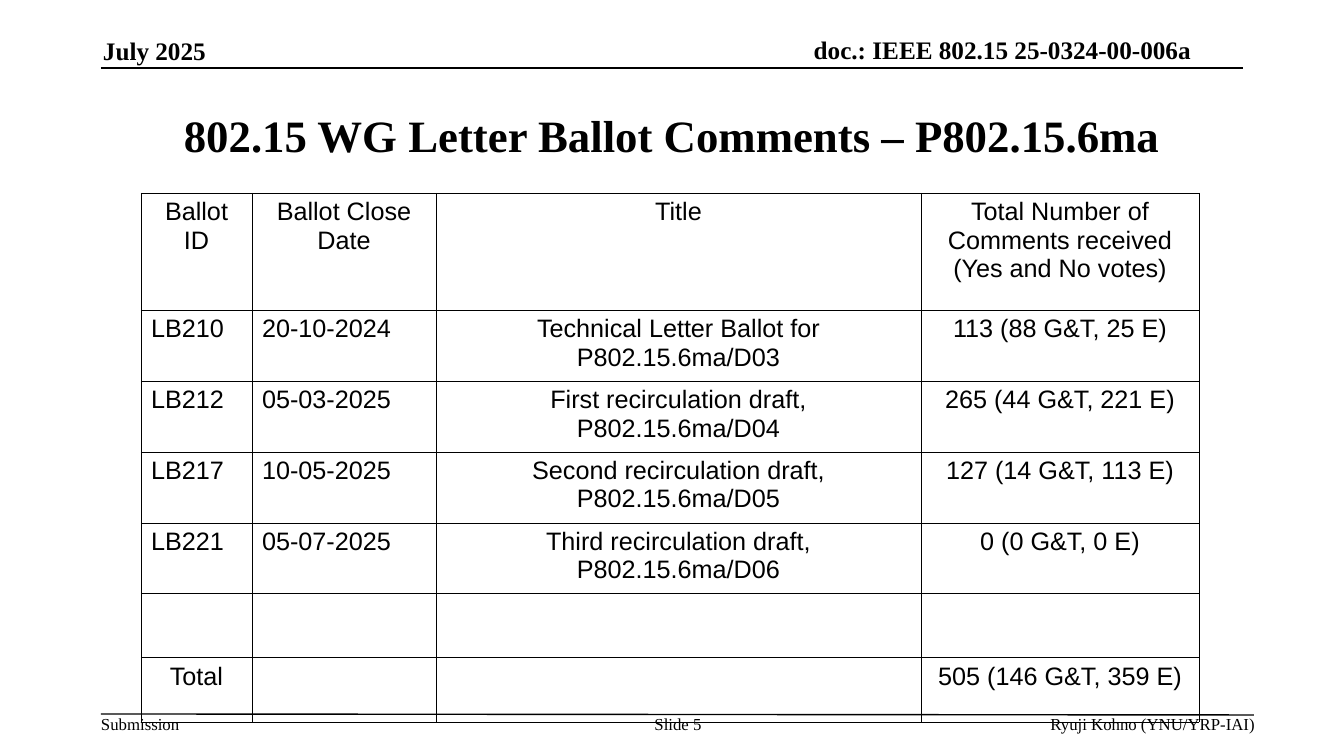
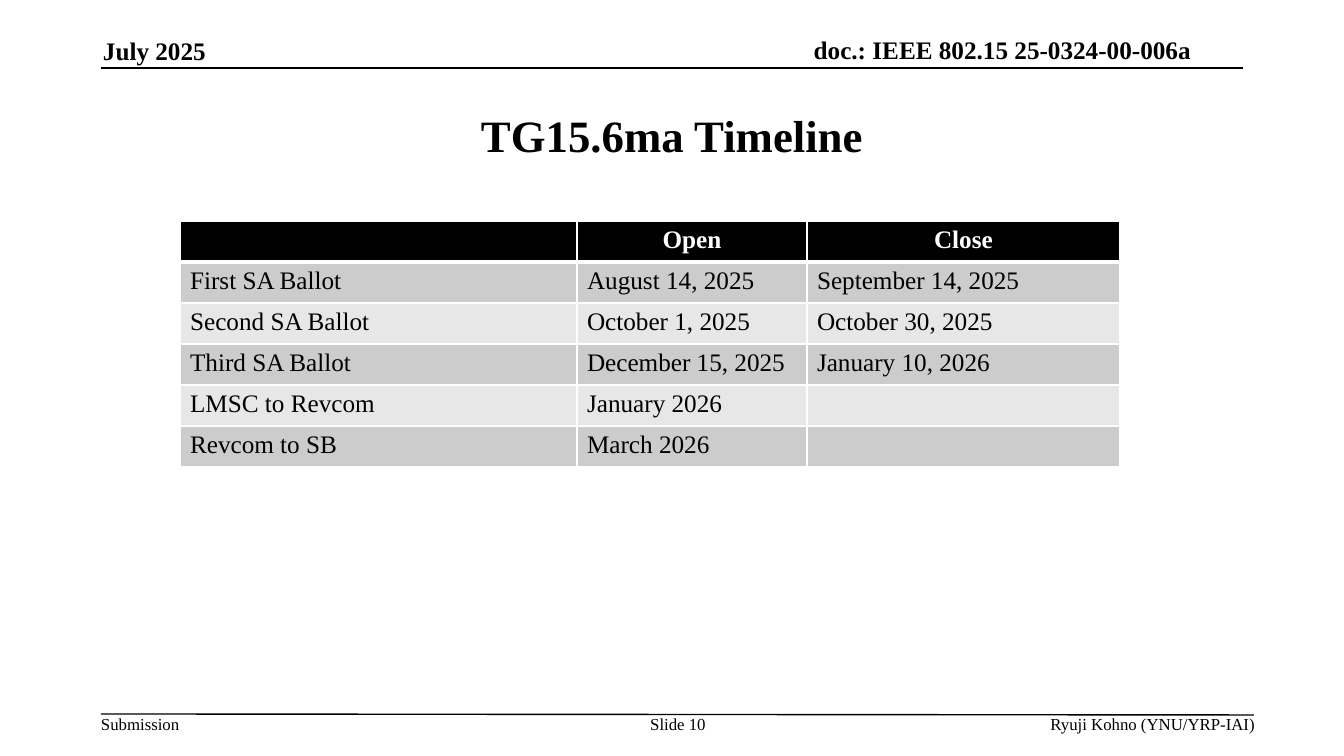
from lxml import etree
from pptx import Presentation
from pptx.dml.color import RGBColor
from pptx.enum.shapes import MSO_CONNECTOR
from pptx.enum.text import MSO_ANCHOR, PP_ALIGN
from pptx.oxml.ns import qn
from pptx.util import Emu, Pt

STRAIGHT = MSO_CONNECTOR.STRAIGHT
TOP, MIDDLE, BOTTOM = MSO_ANCHOR.TOP, MSO_ANCHOR.MIDDLE, MSO_ANCHOR.BOTTOM
LEFT, CENTER, RIGHT = PP_ALIGN.LEFT, PP_ALIGN.CENTER, PP_ALIGN.RIGHT

BLACK = RGBColor(0x00, 0x00, 0x00)
WHITE = RGBColor(0xFF, 0xFF, 0xFF)
DARK_BAND = RGBColor(0xCC, 0xCC, 0xCC)
LIGHT_BAND = RGBColor(0xE7, 0xE7, 0xE7)

SERIF = "Times New Roman"
SANS = "Arial"
PX = 914400 / 100.8

HEADER_FOOTER = [
    ("doc.: IEEE 802.15 25-0324-00-006a", (677, 35, 514, 30), 18, True, RIGHT, BOTTOM),
    ("July 2025", (103, 36, 275, 30), 18, True, LEFT, BOTTOM),
    ("Submission", (101, 714, 79, 20), 12, False, LEFT, TOP),
    ("Ryuji Kohno (YNU/YRP-IAI)", (787, 714, 468, 20), 12, False, RIGHT, TOP),
]
RULES = [(101, 68, 1243, 68), (101, 714, 1254, 715)]

SLIDES = [
    {
        "title": "802.15 WG Letter Ballot Comments – P802.15.6ma",
        "number": 5,
        "origin": (141, 193),
        "widths": [111, 184, 485, 278],
        "heights": [117, 71, 70, 71, 70, 64, 65],
        "font": SANS,
        "alignments": [LEFT, LEFT, CENTER, CENTER],
        "banded": False,
        "border": (BLACK, 0.06),
        "rows": [
            ("Ballot ID", "Ballot Close Date", "Title",
             "Total Number of Comments received (Yes and No votes)"),
            ("LB210", "20-10-2024", "Technical Letter Ballot for P802.15.6ma/D03",
             "113 (88 G&T, 25 E)"),
            ("LB212", "05-03-2025", "First recirculation draft, P802.15.6ma/D04",
             "265 (44 G&T, 221 E)"),
            ("LB217", "10-05-2025", "Second recirculation draft, P802.15.6ma/D05",
             "127 (14 G&T, 113 E)"),
            ("LB221", "05-07-2025", "Third recirculation draft, P802.15.6ma/D06",
             "0 (0 G&T, 0 E)"),
            ("", "", "", ""),
            ("Total", "", "", "505 (146 G&T, 359 E)"),
        ],
    },
    {
        "title": "TG15.6ma Timeline",
        "number": 10,
        "origin": (180, 221),
        "widths": [397, 230, 313],
        "heights": [41] * 6,
        "font": SERIF,
        "alignments": [LEFT] * 3,
        "banded": True,
        "border": (WHITE, 0.96),
        "rows": [
            ("", "Open", "Close"),
            ("First SA Ballot", "August 14, 2025", "September 14, 2025"),
            ("Second SA Ballot", "October 1, 2025", "October 30, 2025"),
            ("Third SA Ballot", "December 15, 2025", "January 10, 2026"),
            ("LMSC to Revcom", "January 2026", ""),
            ("Revcom to SB", "March 2026", ""),
        ],
    },
]


def px(*lengths):
    return [Emu(round(length * PX)) for length in lengths]


def format_paragraph(paragraph, text, size, bold, alignment, font=SERIF, color=BLACK):
    paragraph.text = text
    paragraph.alignment = alignment
    paragraph.font.name = font
    paragraph.font.size = Pt(size)
    paragraph.font.bold = bold
    paragraph.font.color.rgb = color


presentation = Presentation()
presentation.slide_width, presentation.slide_height = px(1344, 756)
title_only = presentation.slide_layouts[5]

for content in SLIDES:
    slide = presentation.slides.add_slide(title_only)

    title = slide.shapes.title
    title.left, title.top, title.width, title.height = px(101, 76, 1142, 117)
    title.text_frame.vertical_anchor = MIDDLE
    format_paragraph(title.text_frame.paragraphs[0], content["title"], 32, True, CENTER)

    for ends in RULES:
        rule = slide.shapes.add_connector(STRAIGHT, *px(*ends))
        rule.line.color.rgb = BLACK
        rule.line.width = Pt(1)
        etree.SubElement(rule._element.spPr, qn("a:effectLst"))

    slide_number = (f"Slide {content['number']}", (639, 714, 78, 40), 12, False, CENTER, TOP)
    for text, box, size, bold, alignment, anchor in HEADER_FOOTER + [slide_number]:
        frame = slide.shapes.add_textbox(*px(*box)).text_frame
        frame.margin_left = frame.margin_top = frame.margin_right = frame.margin_bottom = 0
        frame.word_wrap = True
        frame.vertical_anchor = anchor
        format_paragraph(frame.paragraphs[0], text, size, bold, alignment)

    rows, widths, heights = content["rows"], content["widths"], content["heights"]
    banded = content["banded"]
    border_color, border_width = content["border"]
    table = slide.shapes.add_table(
        len(rows), len(widths), *px(*content["origin"], sum(widths), sum(heights))
    ).table
    table.first_row = table.horz_banding = banded
    for column, width in zip(table.columns, px(*widths)):
        column.width = width
    for row, height in zip(table.rows, px(*heights)):
        row.height = height

    for row_index, texts in enumerate(rows):
        is_header = row_index == 0
        for column_index, text in enumerate(texts):
            cell = table.cell(row_index, column_index)
            centered = is_header or text == "Total"
            format_paragraph(
                cell.text_frame.paragraphs[0], text, 18, banded and is_header,
                CENTER if centered else content["alignments"][column_index],
                content["font"], WHITE if banded and is_header else BLACK,
            )

            cell_properties = cell._tc.get_or_add_tcPr()
            heavy_edge = {0: "a:lnB", 1: "a:lnT"}.get(row_index) if banded else None
            for edge in ("a:lnL", "a:lnR", "a:lnT", "a:lnB"):
                width = Pt(3 if edge == heavy_edge else border_width)
                line = etree.SubElement(cell_properties, qn(edge), w=str(width))
                fill = etree.SubElement(line, qn("a:solidFill"))
                etree.SubElement(fill, qn("a:srgbClr"), val=str(border_color))

            if banded:
                cell.fill.solid()
                band = DARK_BAND if row_index % 2 else LIGHT_BAND
                cell.fill.fore_color.rgb = BLACK if is_header else band
            else:
                cell.fill.background()

presentation.save("out.pptx")
